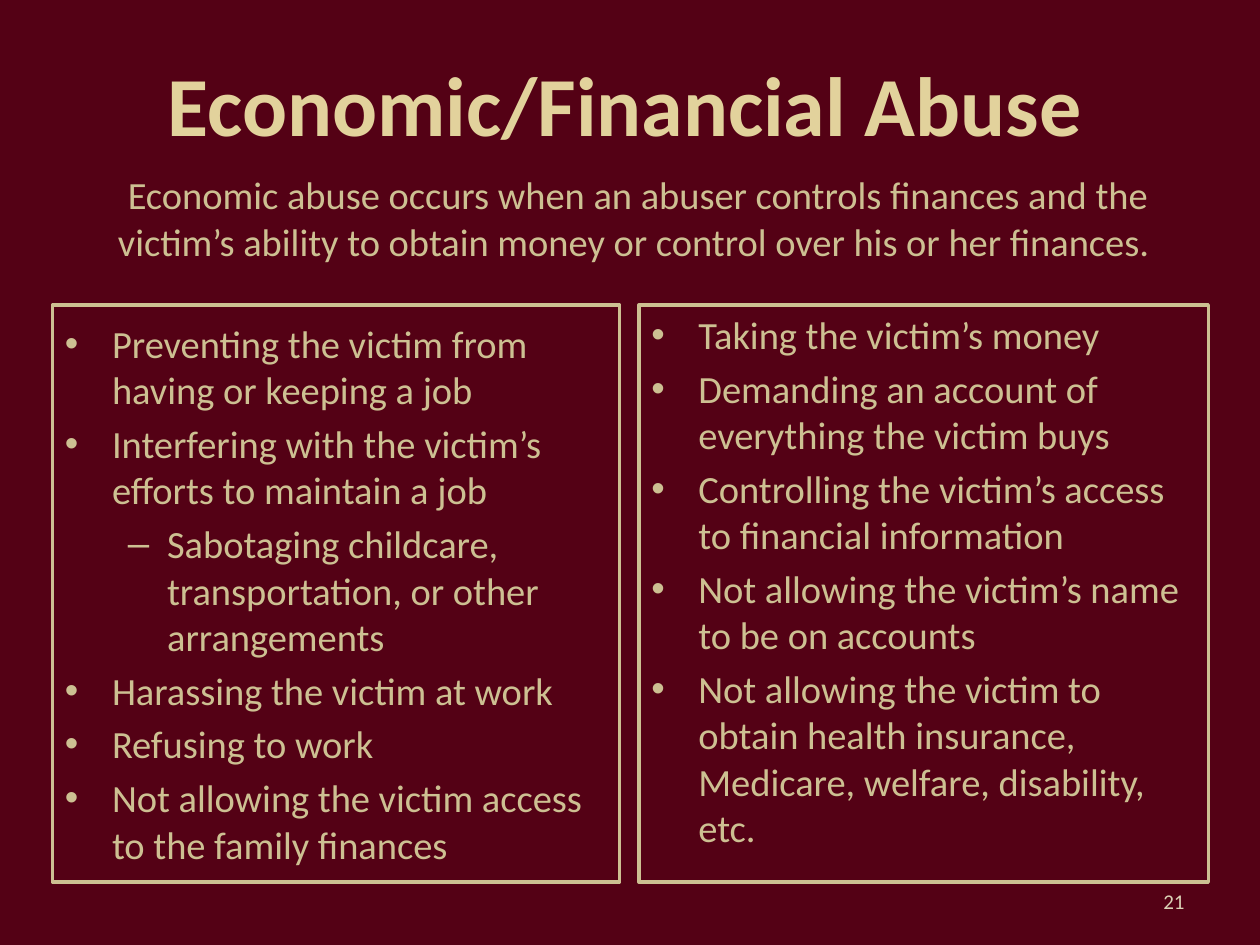
from lxml import etree
from pptx import Presentation
from pptx import util as u
from pptx.dml.color import RGBColor
from pptx.enum import shapes, text
from pptx.oxml.ns import qn

WINE, SAND, GOLD, PALE = "540115", "CDC092", "E2D29C", "DBD2B6"
LEVELS = [("•", 0.95, 0.95), ("–", 2.06, 0.79)]
WORK = [
    ("Preventing the victim from having or keeping a job", 0),
    ("Interfering with the victim’s efforts to maintain a job", 0),
    ("Sabotaging childcare, transportation, or other arrangements", 1),
    ("Harassing the victim at work", 0),
    ("Refusing to work", 0),
    ("Not allowing the victim access to the family finances", 0),
]
MONEY = [
    ("Taking the victim’s money", 0),
    ("Demanding an account of everything the victim buys", 0),
    ("Controlling the victim’s access to financial information", 0),
    ("Not allowing the victim’s name to be on accounts", 0),
    ("Not allowing the victim to obtain health insurance, Medicare, welfare, disability, etc.", 0),
]
SUMMARY = ("Economic abuse occurs when an abuser controls finances and the victim’s "
           "ability to obtain money or control over his or her finances. ")


def color(value):
    """Turn a hex string into a colour."""
    return RGBColor.from_string(value)


def style(paragraph, size, ink, align, bold=False):
    """Set the font and alignment of a paragraph."""
    font = paragraph.font
    font.name, font.size, font.bold = "Calibri", u.Pt(size), bold
    font.color.rgb = color(ink)
    paragraph.alignment = align


def add_label(page, place, words, size, ink, align, bold=False):
    """Add a text box holding one vertically centred line."""
    box = page.shapes.add_textbox(*map(u.Cm, place))
    frame = box.text_frame
    frame.word_wrap = True
    frame.vertical_anchor = text.MSO_ANCHOR.MIDDLE
    frame.text = words
    style(frame.paragraphs[0], size, ink, align, bold)


def add_panel(page, place, edge, anchor):
    """Add a wine rectangle and return its text frame."""
    panel = page.shapes.add_shape(shapes.MSO_SHAPE.RECTANGLE, *map(u.Cm, place))
    panel.shadow.inherit = False
    panel.fill.solid()
    panel.fill.fore_color.rgb = color(WINE)
    panel.line.color.rgb = color(edge)
    panel.line.width = u.Pt(2)
    frame = panel.text_frame
    frame.word_wrap = True
    frame.vertical_anchor = anchor
    return frame


def set_bullet(paragraph, level):
    """Give a paragraph the mark and hanging indent of its level."""
    mark, margin, hang = LEVELS[level]
    paragraph.level = level
    props = paragraph._p.get_or_add_pPr()
    props.set("marL", str(u.Cm(margin)))
    props.set("indent", str(-u.Cm(hang)))
    etree.SubElement(props, qn("a:buFont")).set("typeface", "Arial")
    etree.SubElement(props, qn("a:buChar")).set("char", mark)


def add_list(page, place, items, anchor):
    """Add a framed panel with a bulleted list."""
    frame = add_panel(page, place, SAND, anchor)
    for index, (words, level) in enumerate(items):
        paragraph = frame.add_paragraph() if index else frame.paragraphs[0]
        paragraph.text = words
        paragraph.space_before = u.Pt(4.4)
        set_bullet(paragraph, level)
        style(paragraph, 22, SAND, text.PP_ALIGN.LEFT)


def main():
    """Build and save the slide."""
    deck = Presentation()
    deck.slide_width, deck.slide_height = u.Cm(25.4), u.Cm(19.05)
    page = deck.slides.add_slide(deck.slide_layouts[6])
    page.background.fill.solid()
    page.background.fill.fore_color.rgb = color(WINE)
    align, anchor = text.PP_ALIGN, text.MSO_ANCHOR
    add_label(page, (0.64, 0.48, 23.93, 3.18), "Economic/Financial Abuse", 48, GOLD, align.CENTER, True)
    add_list(page, (1.06, 6.15, 11.43, 11.63), WORK, anchor.MIDDLE)
    add_list(page, (12.88, 6.15, 11.48, 11.63), MONEY, anchor.TOP)
    summary = add_panel(page, (1.6, 3.33, 22.53, 2.13), WINE, anchor.TOP)
    summary.text = SUMMARY
    style(summary.paragraphs[0], 22, SAND, align.CENTER)
    add_label(page, (18.21, 17.65, 5.92, 1.02), "21", 12, PALE, align.RIGHT)
    deck.save("out.pptx")


if __name__ == "__main__":
    main()
